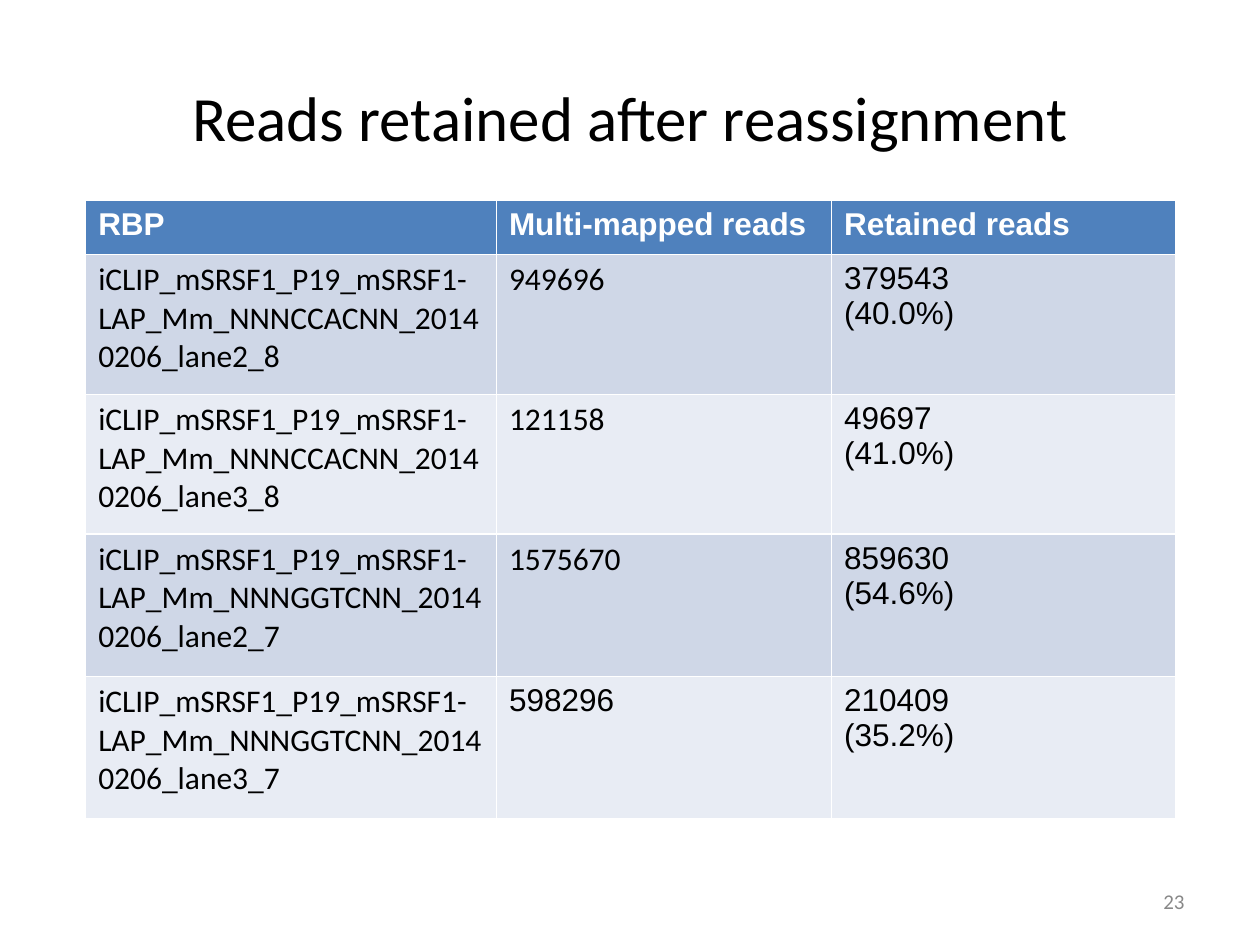
from dataclasses import dataclass

from pptx import Presentation
from pptx.dml.color import RGBColor
from pptx.enum.text import MSO_ANCHOR, PP_ALIGN
from pptx.util import Inches, Pt

COLORS = {
    "header": "4F81BD",
    "odd_band": "CFD7E7",
    "even_band": "E8ECF4",
    "white": "FFFFFF",
    "black": "000000",
    "gray": "888888",
}


@dataclass
class Sample:
    barcode: str
    lane: str
    multi_mapped: str
    retained: str
    share: str
    count_font: str = "Calibri"

    @property
    def label(self) -> str:
        return f"iCLIP_mSRSF1_P19_mSRSF1-LAP_Mm_{self.barcode}_20140206_{self.lane}"


HEADINGS = ["RBP", "Multi-mapped reads", "Retained reads"]
SAMPLES = [
    Sample("NNNCCACNN", "lane2_8", "949696", "379543", "40.0%"),
    Sample("NNNCCACNN", "lane3_8", "121158", "49697", "41.0%"),
    Sample("NNNGGTCNN", "lane2_7", "1575670", "859630", "54.6%"),
    Sample("NNNGGTCNN", "lane3_7", "598296", "210409", "35.2%", "Arial"),
]
COLUMN_WIDTHS = [3.26, 2.66, 2.73]
ROW_HEIGHTS = [0.43, 1.11, 1.11, 1.13, 1.13]


def write(frame, text: str, font: str, size: float, color: str,
          bold: bool = False, align=PP_ALIGN.LEFT) -> None:
    """Fill a text frame, one paragraph per line, in one format."""
    frame.text = text
    font_format = {"name": font, "size": Pt(size), "bold": bold}
    for paragraph in frame.paragraphs:
        paragraph.alignment = align
        for run in paragraph.runs:
            for attribute, value in font_format.items():
                setattr(run.font, attribute, value)
            run.font.color.rgb = RGBColor.from_string(COLORS[color])


def fill_cell(cell, text: str, font: str, band: str, color: str = "black",
              bold: bool = False) -> None:
    cell.fill.solid()
    cell.fill.fore_color.rgb = RGBColor.from_string(COLORS[band])
    write(cell.text_frame, text, font, 18, color, bold)


def add_reads_table(slide) -> None:
    table = slide.shapes.add_table(
        len(ROW_HEIGHTS), len(COLUMN_WIDTHS), Inches(0.68), Inches(1.59),
        Inches(sum(COLUMN_WIDTHS)), Inches(sum(ROW_HEIGHTS))).table
    for column, width in zip(table.columns, COLUMN_WIDTHS):
        column.width = Inches(width)
    for row, height in zip(table.rows, ROW_HEIGHTS):
        row.height = Inches(height)

    # Header row
    for column, heading in enumerate(HEADINGS):
        fill_cell(table.cell(0, column), heading, "Arial", "header", "white", True)

    # Sample rows
    for row, sample in enumerate(SAMPLES, start=1):
        band = "odd_band" if row % 2 else "even_band"
        fill_cell(table.cell(row, 0), sample.label, "Calibri", band)
        fill_cell(table.cell(row, 1), sample.multi_mapped, sample.count_font, band)
        fill_cell(table.cell(row, 2), f"{sample.retained}\n({sample.share})", "Arial", band)


def main() -> None:
    deck = Presentation()
    deck.slide_width, deck.slide_height = Inches(10), Inches(7.5)
    slide = deck.slides.add_slide(deck.slide_layouts[5])

    # Title
    title = slide.shapes.title
    title.left, title.top = Inches(0.5), Inches(0.3)
    title.width, title.height = Inches(9), Inches(1.25)
    title.text_frame.vertical_anchor = MSO_ANCHOR.MIDDLE
    write(title.text_frame, "Reads retained after reassignment", "Calibri", 36,
          "black", align=PP_ALIGN.CENTER)

    add_reads_table(slide)

    # Page number
    page_number = slide.shapes.add_textbox(
        Inches(7.17), Inches(6.95), Inches(2.33), Inches(0.4)).text_frame
    page_number.word_wrap = True
    page_number.vertical_anchor = MSO_ANCHOR.MIDDLE
    write(page_number, "23", "Calibri", 12, "gray", align=PP_ALIGN.RIGHT)

    deck.save("out.pptx")


if __name__ == "__main__":
    main()
